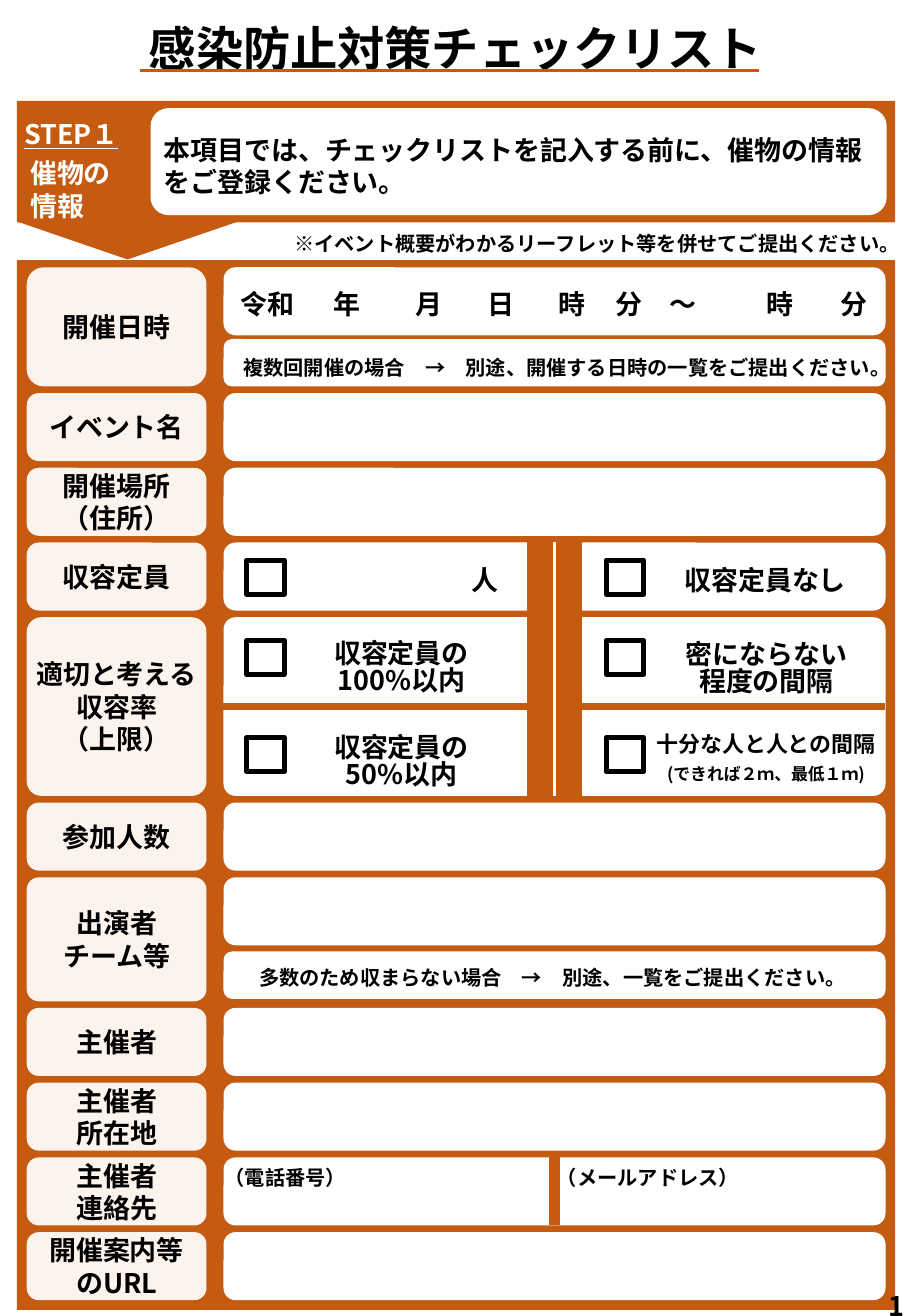
"""Build the event registration page of an infection prevention checklist."""
import dataclasses
import typing

import lxml.etree
import pptx
import pptx.dml.color
import pptx.enum.shapes
import pptx.enum.text
import pptx.oxml.ns
import pptx.util

Inches = pptx.util.Inches
Pt = pptx.util.Pt
Kind = pptx.enum.shapes.MSO_SHAPE
Align = pptx.enum.text.PP_ALIGN
Anchor = pptx.enum.text.MSO_ANCHOR
FONT = "Noto Sans CJK JP"
ORANGE, CREAM, WHITE, BLACK = "C55A11", "FDF3ED", "FFFFFF", "000000"
LEFT, WIDE, GAP = 1.84, 5.45, 0.055


@dataclasses.dataclass
class Row:
    label: str
    high: float = 0.56
    field: float = 0.56
    note: float = 0
    round: float = 0.1
    side: float = 0.07


@dataclasses.dataclass
class Note:
    text: str
    left: float
    top: float
    width: float
    high: float = 0.3
    size: float = 16
    sub: float = 0
    align: typing.Any = Align.CENTER
    lead: float = 16


ROWS = [
    Row("開催日時", 0.98, note=0.59, round=0.14),
    Row("イベント名"),
    Row("開催場所\n（住所）"),
    Row("収容定員", side=0),
    Row("適切と考える\n収容率\n（上限）", 1.47, 1.47, round=0.12, side=0),
    Row("参加人数"),
    Row("出演者\nチーム等", 1.02, note=0.61),
    Row("主催者"),
    Row("主催者\n所在地"),
    Row("主催者\n連絡先"),
    Row("開催案内等のURL"),
]
DATES = [("令和", 1.76, 0.89), ("年", 2.41, 0.89), ("月", 3.09, 0.89),
         ("日", 3.68, 0.89), ("時", 4.26, 0.89), ("分　～　", 4.85, 1.32),
         ("分", 6.37, 1.32), ("時", 5.98, 0.89)]
NOTES = [Note(text, left, 2.36, width) for text, left, width in DATES] + [
    Note("複数回開催の場合　→　別途、開催する日時の一覧をご提出ください。", 1.89, 2.85, 5.39, size=12),
    Note("人", 3.55, 4.63, 0.89),
    Note("収容定員なし", 5.49, 4.63, 1.62),
    Note("収容定員の\n100%以内", 2.24, 5.23, 2.13, 0.5),
    Note("密にならない程度の間隔", 5.5, 5.24, 1.62, 0.5),
    Note("収容定員の\n50%以内", 2.24, 6.01, 2.13, 0.5),
    Note("十分な人と人との間隔\n(できれば２ｍ、最低１ｍ)", 5.23, 5.96, 2.15, 0.55, 13, 10),
    Note("多数のため収まらない場合　→　別途、一覧をご提出ください。", 1.98, 7.87, 5.14, size=12),
    Note("（電話番号）", 1.68, 9.52, 1.34, size=12),
    Note("（メールアドレス）", 4.48, 9.52, 1.71, size=12),
    Note("※イベント概要がわかるリーフレット等を併せてご提出ください。", 2.12, 1.83, 5.39, 0.33, 12,
         align=Align.RIGHT),
    Note("1", 7.22, 10.56, 0.59, 0.37, align=Align.LEFT, lead=0),
]


def paint(target: typing.Any, code: str) -> None:
    """Set a colour from a hex string."""
    target.rgb = pptx.dml.color.RGBColor.from_string(code)


def write(frame: typing.Any, text: str, *, size: float = 16, sub: float = 0,
          color: str = BLACK, align: typing.Any = Align.CENTER,
          lead: float = 0, head: bool = False) -> None:
    """Fill a text frame, one paragraph for each line of text."""
    frame.word_wrap = True
    for index, line in enumerate(text.split("\n")):
        para = frame.add_paragraph() if index else frame.paragraphs[0]
        para.alignment = align
        if lead:
            para.line_spacing = Pt(lead)
        run = para.add_run()
        run.text = line
        font = run.font
        font.name, font.bold = FONT, True
        font.size = Pt(sub if index and sub else size)
        paint(font.color, color)
        if head and not index:
            font.underline = True
            para.space_after = Pt(4)
        east = lxml.etree.SubElement(font._element, pptx.oxml.ns.qn("a:ea"))
        east.set("typeface", FONT)


def label(slide: typing.Any, text: str, left: float, top: float,
          width: float, high: float, **style: typing.Any) -> None:
    """Add a text box."""
    box = slide.shapes.add_textbox(Inches(left), Inches(top), Inches(width), Inches(high))
    write(box.text_frame, text, **style)


def block(slide: typing.Any, left: float, top: float, width: float, high: float,
          fill: str = "", kind: typing.Any = Kind.RECTANGLE, radius: float = 0) -> typing.Any:
    """Add a filled shape, or a black outlined one when no fill is given."""
    shape = slide.shapes.add_shape(kind, Inches(left), Inches(top), Inches(width), Inches(high))
    shape.shadow.inherit = False
    if radius:
        shape.adjustments[0] = radius / min(width, high)
    if fill:
        shape.fill.solid()
        paint(shape.fill.fore_color, fill)
        shape.line.fill.background()
    else:
        shape.fill.background()
        paint(shape.line.color, BLACK)
        shape.line.width = Pt(3)
    return shape


def rule(slide: typing.Any, color: str, width: float, ends: typing.Sequence[float] = (0, 0, 0, 0),
         host: typing.Any = None, sides: typing.Sequence[int] = (0, 2)) -> None:
    """Draw a line between two points, or across a host shape."""
    line = slide.shapes.add_connector(
        pptx.enum.shapes.MSO_CONNECTOR.STRAIGHT, *[Inches(end) for end in ends])
    if host is not None:
        line.begin_connect(host, sides[0])
        line.end_connect(host, sides[1])
    paint(line.line.color, color)
    line.line.width = Pt(width)
    lxml.etree.SubElement(line._element.spPr, pptx.oxml.ns.qn("a:effectLst"))


def header(slide: typing.Any) -> None:
    """Place the title and the step banner."""
    arrow = block(slide, 0.74, 0.92, 0.62, 1.81, ORANGE, Kind.PENTAGON)
    arrow.rotation = 90
    block(slide, 0.14, 0.83, 7.23, 1, ORANGE)
    block(slide, 1.24, 0.89, 6.06, 0.88, WHITE, Kind.ROUNDED_RECTANGLE)
    label(slide, "STEP１\n 催物の\n 情報", 0.1, 0.92, 1.19, 0.96,
          color=WHITE, align=Align.LEFT, head=True)
    label(slide, "本項目では、チェックリストを記入する前に、催物の情報をご登録ください。",
          1.25, 1.05, 6.14, 0.64, align=Align.LEFT)
    title = slide.shapes.title
    title.left, title.top, title.width, title.height = map(Inches, (0.48, 0.11, 6.54, 0.57))
    title.text_frame.auto_size = pptx.enum.text.MSO_AUTO_SIZE.NONE
    title.text_frame.vertical_anchor = Anchor.TOP
    write(title.text_frame, "感染防止対策チェックリスト", size=28)
    rule(slide, ORANGE, 2.25, (1.15, 0.58, 6.25, 0.58))


def form(slide: typing.Any) -> None:
    """Place the form rows, dividers, boxes and notes."""
    block(slide, 0.14, 2.14, 7.23, 8.64, ORANGE)
    top, fields = 2.2, {}
    for row in ROWS:
        name = block(slide, 0.22, top, 1.48, row.high, CREAM, Kind.ROUNDED_RECTANGLE, row.round)
        frame = name.text_frame
        frame.vertical_anchor = Anchor.MIDDLE
        frame.margin_left = frame.margin_right = Inches(row.side)
        frame.margin_top = frame.margin_bottom = Inches(0.04)
        write(frame, row.label)
        fields[row.label] = block(slide, LEFT, top, WIDE, row.field, WHITE,
                                  Kind.ROUNDED_RECTANGLE, 0.1)
        if row.note:
            block(slide, LEFT, top + row.note, WIDE, 0.39, WHITE, Kind.ROUNDED_RECTANGLE, 0.07)
        top += row.high + GAP
    rule(slide, ORANGE, 4.5, host=fields[ROWS[4].label], sides=(3, 1))
    rule(slide, ORANGE, 6, host=fields[ROWS[9].label])
    bar = block(slide, 4.34, 4.46, 0.45, 2.09, ORANGE)
    rule(slide, WHITE, 2.25, host=bar)
    for y in (4.61, 5.27, 6.07):
        for x in (2.03, 4.99):
            block(slide, x, y, 0.31, 0.28)
    for note in NOTES:
        label(slide, note.text, note.left, note.top, note.width, note.high,
              size=note.size, sub=note.sub, align=note.align, lead=note.lead)


def main() -> None:
    """Build and save the deck."""
    deck = pptx.Presentation()
    deck.slide_width, deck.slide_height = Inches(7.5), Inches(10.83)
    slide = deck.slides.add_slide(deck.slide_layouts[5])
    header(slide)
    form(slide)
    deck.save("out.pptx")


if __name__ == "__main__":
    main()
